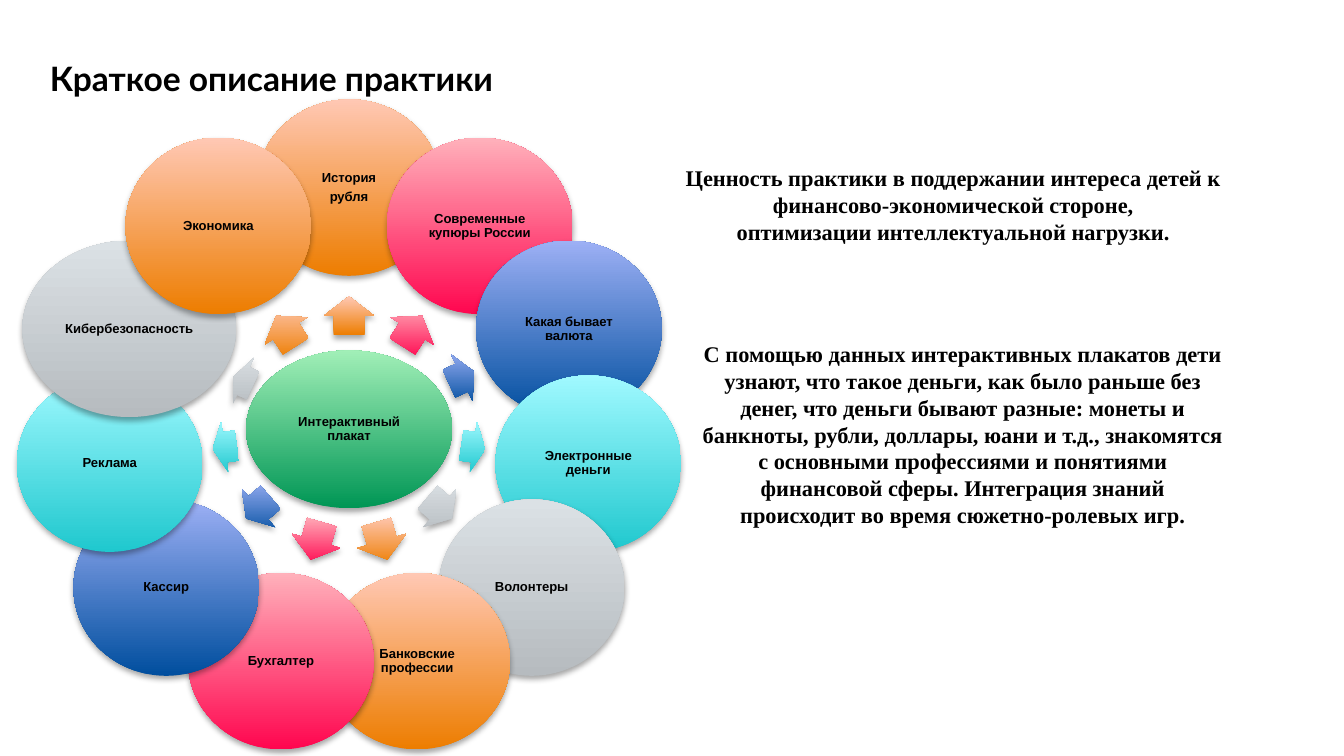
"""Build the practice overview slide: a ring of poster topics beside two notes."""
import math

import lxml.etree
import pptx
import pptx.dml.color
import pptx.enum.shapes
import pptx.enum.text
import pptx.oxml
import pptx.oxml.ns
import pptx.util

Pt = pptx.util.Pt
RGB = pptx.dml.color.RGBColor
Shape = pptx.enum.shapes.MSO_SHAPE
Align = pptx.enum.text.PP_ALIGN
Anchor = pptx.enum.text.MSO_ANCHOR
AutoSize = pptx.enum.text.MSO_AUTO_SIZE

COLORS = {
    "text": "000000",
    "green": ("009655", "A1EFB7"),
    "orange": ("ED7D00", "FFC8B4"),
    "pink": ("FF064F", "FFB1BB"),
    "blue": ("004E9E", "9DB0F5"),
    "cyan": ("1FC8CE", "A0F9FF"),
    "gray": ("B6BBBF", "DBE1E5"),
}
SHADOW = (
    '<a:outerShdw xmlns:a="http://schemas.openxmlformats.org/drawingml/2006/main" '
    'blurRad="39400" dist="22900" dir="5400000" rotWithShape="0">'
    '<a:srgbClr val="000000"><a:alpha val="35000"/></a:srgbClr></a:outerShdw>'
)


def write(frame, text, font, size, align=Align.CENTER, inset=None,
          anchor=Anchor.TOP, spacing=None, after=None):
    frame.word_wrap = True
    frame.vertical_anchor = anchor
    if inset is not None:
        frame.margin_left = frame.margin_right = Pt(inset)
        frame.margin_top = frame.margin_bottom = Pt(inset)
    frame.text = text
    for paragraph in frame.paragraphs:
        paragraph.alignment = align
        if spacing is not None:
            paragraph.line_spacing = spacing
        if after is not None:
            paragraph.space_after = Pt(after)
        for run in paragraph.runs:
            run.font.name = font
            run.font.size = Pt(size)
            run.font.bold = True
            run.font.color.rgb = RGB.from_string(COLORS["text"])


def add_part(kind, center_x, center_y, width, height, color):
    part = slide.shapes.add_shape(kind, Pt(center_x - width / 2), Pt(center_y - height / 2),
                                  Pt(width), Pt(height))
    part.fill.gradient()
    part.fill.gradient_angle = 90
    for stop, shade in zip(part.fill.gradient_stops, COLORS[color]):
        stop.color.rgb = RGB.from_string(shade)
    part.line.fill.background()
    part.shadow.inherit = False
    properties = part.element.spPr
    properties.find(pptx.oxml.ns.qn("a:gradFill")).set("rotWithShape", "0")
    effects = properties.find(pptx.oxml.ns.qn("a:effectLst"))
    effects.append(pptx.oxml.parse_xml(SHADOW))
    return part


presentation = pptx.Presentation()
presentation.slide_width = Pt(720)
presentation.slide_height = Pt(405)
slide = presentation.slides.add_slide(presentation.slide_layouts[6])

heading = slide.shapes.add_textbox(Pt(26.7), Pt(31), Pt(542), Pt(54))
write(heading.text_frame, "Краткое описание практики", "Lato", 18, align=Align.LEFT, inset=0)

value_note = slide.shapes.add_textbox(Pt(334), Pt(84.3), Pt(353.5), Pt(51))
write(value_note.text_frame,
      "Ценность практики в поддержании интереса детей к финансово-экономической стороне,\n"
      "оптимизации интеллектуальной нагрузки.", "Times New Roman", 12)
value_note.text_frame.auto_size = AutoSize.SHAPE_TO_FIT_TEXT

HUB_X, HUB_Y = 187, 230
RING = 129.5
label = dict(font="Arial", size=7, inset=0.7, anchor=Anchor.MIDDLE, spacing=0.9, after=2.45)

hub = add_part(Shape.OVAL, HUB_X, HUB_Y, 110.4, 84.5, "green")
write(hub.text_frame, "Интерактивный плакат", **label)

topics = [
    ("История\nрубля", "orange", 99.5, 20.9, 60.8),
    ("Современные купюры России", "pink", 99.5, 19.4, 62.6),
    ("Какая бывает валюта", "blue", 99.5, 15.1, 66.4),
    ("Электронные деньги", "cyan", 99.5, 13, 67.3),
    ("Волонтеры", "gray", 99.5, 17.3, 64.3),
    ("Банковские профессии", "orange", 99.5, 20.9, 62.3),
    ("Бухгалтер", "pink", 99.5, 20.9, 62.3),
    ("Кассир", "blue", 99.5, 17.3, 64.3),
    ("Реклама", "cyan", 99.5, 13, 67.3),
    ("Кибербезопасность", "gray", 114.5, 11.5, 62.3),
    ("Экономика", "orange", 99.5, 19.4, 62.6),
]
for index, (topic, color, topic_width, arrow_length, arrow_radius) in enumerate(topics):
    turn = 360 * index / len(topics)
    across, up = math.sin(math.radians(turn)), math.cos(math.radians(turn))
    arrow = add_part(Shape.RIGHT_ARROW, HUB_X + arrow_radius * across,
                     HUB_Y - arrow_radius * up, arrow_length, 27.2, color)
    arrow.rotation = (turn + 270) % 360
    arrow.adjustments[0] = 0.6
    arrow.adjustments[1] = 0.5
    circle = add_part(Shape.OVAL, HUB_X + RING * across, HUB_Y - RING * up,
                      topic_width, 94.5, color)
    write(circle.text_frame, topic, **label)

outcome_note = slide.shapes.add_textbox(Pt(368.6), Pt(178.6), Pt(294.5), Pt(108.7))
write(outcome_note.text_frame,
      "С помощью данных интерактивных плакатов дети узнают, что такое деньги, "
      "как было раньше без денег, что деньги бывают разные: монеты и банкноты, "
      "рубли, доллары, юани и т.д., знакомятся с основными профессиями и понятиями "
      "финансовой сферы. Интеграция знаний происходит во время сюжетно-ролевых игр.",
      "Times New Roman", 12)
outcome_note.text_frame.auto_size = AutoSize.SHAPE_TO_FIT_TEXT

presentation.save("out.pptx")
